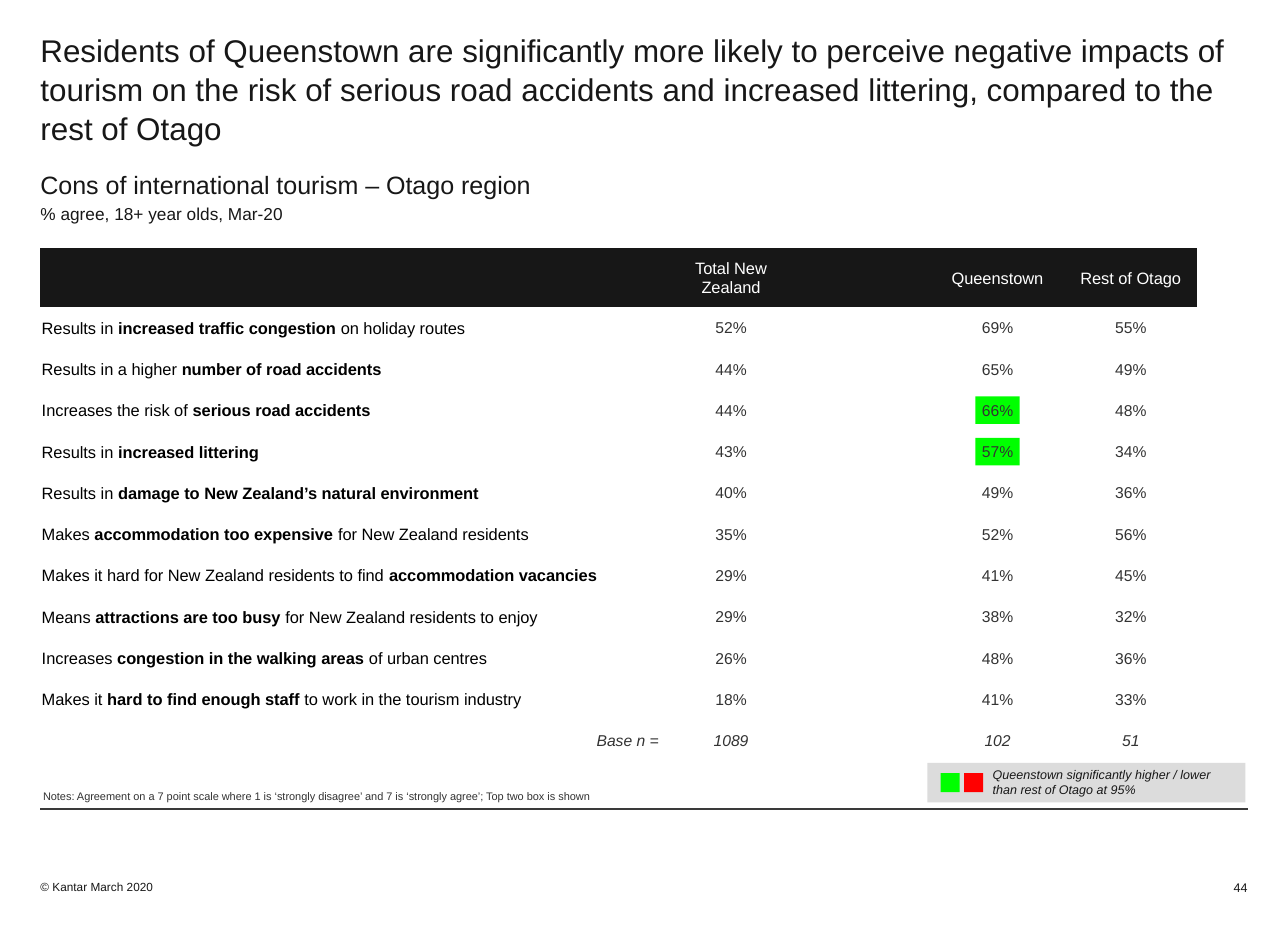
from lxml import etree
from pptx import Presentation
from pptx.dml.color import RGBColor
from pptx.enum.shapes import MSO_CONNECTOR, MSO_SHAPE
from pptx.enum.text import MSO_ANCHOR, MSO_AUTO_SIZE, PP_ALIGN
from pptx.oxml.ns import qn
from pptx.util import Cm, Pt

LEFT, CENTER, RIGHT = PP_ALIGN.LEFT, PP_ALIGN.CENTER, PP_ALIGN.RIGHT
TOP, MIDDLE, BOTTOM = MSO_ANCHOR.TOP, MSO_ANCHOR.MIDDLE, MSO_ANCHOR.BOTTOM
NO_FIT = MSO_AUTO_SIZE.NONE
RECTANGLE = MSO_SHAPE.RECTANGLE
STRAIGHT = MSO_CONNECTOR.STRAIGHT

FONT = "Arial"
COLORS = {
    "ink": "171717", "black": "000000", "body": "333333", "rule": "3A3A3A",
    "white": "FFFFFF", "panel": "DCDCDC", "higher": "00FF00", "lower": "FF0000",
}
NO_STYLE = "{2D5ABB26-0587-4C30-8999-92F81FD0307C}"
CELL_INSETS = (0.03, 0.03, 0.03, 0)

COLUMNS = [14.05, 3, 3, 3, 3]
HEADER_HEIGHT, ROW_HEIGHT = 1.32, 0.93
QUEENSTOWN = 3
HEADINGS = ["", "Total New Zealand", "", "Queenstown", "Rest of Otago"]
IMPACTS = [
    ("Results in *increased traffic congestion* on holiday routes", 52, 69, 55),
    ("Results in a higher *number of road accidents*", 44, 65, 49),
    ("Increases the risk of *serious road accidents*", 44, 66, 48),
    ("Results in *increased littering*", 43, 57, 34),
    ("Results in *damage to New Zealand’s natural environment*", 40, 49, 36),
    ("Makes *accommodation too expensive* for New Zealand residents", 35, 52, 56),
    ("Makes it hard for New Zealand residents to find *accommodation vacancies*", 29, 41, 45),
    ("Means *attractions are too busy* for New Zealand residents to enjoy", 29, 38, 32),
    ("Increases *congestion in the walking areas* of urban centres", 26, 48, 36),
    ("Makes it *hard to find enough staff* to work in the tourism industry", 18, 41, 33),
]
BASES = ["Base n =", "1089", "", "102", "51"]
SIGNIFICANT_ROWS = [3, 4]


def rgb(name):
    """Return the named colour."""
    return RGBColor.from_string(COLORS[name])


def write(paragraph, text, size=10, color="ink", align=LEFT, italic=False, before=0, spacing=None):
    """Write text into a paragraph, with the parts between asterisks in bold."""
    paragraph.alignment = align
    paragraph.space_before = Pt(before)
    paragraph.line_spacing = spacing
    paragraph.font.size = Pt(size)
    for position, part in enumerate(text.split("*")):
        if part:
            run = paragraph.add_run()
            run.text = part
            run.font.name = FONT
            run.font.size = Pt(size)
            run.font.bold = position % 2 == 1
            run.font.italic = italic
            run.font.color.rgb = rgb(color)


def set_insets(holder, insets):
    """Set the left, top, right and bottom margins of a cell or text frame."""
    left, top, right, bottom = map(Cm, insets)
    holder.margin_left, holder.margin_top = left, top
    holder.margin_right, holder.margin_bottom = right, bottom


def prepare(frame, insets, anchor):
    """Set up a wrapping text frame and return its first paragraph."""
    frame.word_wrap = True
    frame.auto_size = NO_FIT
    frame.vertical_anchor = anchor
    set_insets(frame, insets)
    return frame.paragraphs[0]


def add_text(slide, box, text, insets=(0, 0, 0, 0), anchor=BOTTOM, **style):
    """Add a text box with one paragraph."""
    frame = slide.shapes.add_textbox(*map(Cm, box)).text_frame
    write(prepare(frame, insets, anchor), text, **style)


def add_block(slide, box, color):
    """Add a plain coloured rectangle."""
    block = slide.shapes.add_shape(RECTANGLE, *map(Cm, box))
    block.shadow.inherit = False
    block.fill.solid()
    block.fill.fore_color.rgb = rgb(color)
    block.line.fill.background()


def place(holder, box):
    """Move a placeholder into a box."""
    holder.left, holder.top, holder.width, holder.height = map(Cm, box)


def fill_heading(slide, box):
    """Fill the title and the subtitle lines below it."""
    left, top, width, height = box
    title, subtitle = slide.placeholders
    title_height = 3.15
    insets = (0, 0.66, 0, 0)
    place(title, (left, top, width, title_height))
    write(prepare(title.text_frame, insets, TOP),
          "Residents of Queenstown are significantly more likely to perceive negative impacts of "
          "tourism on the risk of serious road accidents and increased littering, compared to the "
          "rest of Otago", size=20, spacing=1.04)
    place(subtitle, (left, top + title_height, width, height - title_height))
    topic = prepare(subtitle.text_frame, insets, TOP)
    measure = subtitle.text_frame.add_paragraph()
    for paragraph in (topic, measure):
        properties = paragraph._p.get_or_add_pPr()
        properties.set("marL", "0")
        properties.set("indent", "0")
        etree.SubElement(properties, qn("a:buNone"))
    write(topic, "Cons of international tourism – Otago region", size=16)
    write(measure, "% agree, 18+ year olds, Mar-20", size=11, before=2.2)


def fill_cell(cell, text, fill=None, insets=CELL_INSETS, **style):
    """Fill one table cell."""
    set_insets(cell, insets)
    cell.vertical_anchor = MIDDLE
    if fill:
        cell.fill.solid()
        cell.fill.fore_color.rgb = rgb(fill)
    else:
        cell.fill.background()
    write(cell.text_frame.paragraphs[0], text, **style)


def add_impacts_table(slide, box):
    """Add the table of impacts over its significance highlights."""
    left, top, width, height = box
    mark_width, mark_height = 1, 0.62
    center = left + sum(COLUMNS[:QUEENSTOWN]) + COLUMNS[QUEENSTOWN] / 2
    for row in SIGNIFICANT_ROWS:
        middle = top + HEADER_HEIGHT + (row - 0.5) * ROW_HEIGHT
        add_block(slide, (center - mark_width / 2, middle - mark_height / 2,
                          mark_width, mark_height), "higher")

    table = slide.shapes.add_table(len(IMPACTS) + 2, len(COLUMNS), *map(Cm, box)).table
    table.first_row = table.horz_banding = False
    table._tbl.tblPr.find(qn("a:tableStyleId")).text = NO_STYLE
    for column, column_width in zip(table.columns, COLUMNS):
        column.width = Cm(column_width)
    for index, row in enumerate(table.rows):
        row.height = Cm(ROW_HEIGHT if index else HEADER_HEIGHT)

    for column, heading in enumerate(HEADINGS):
        fill_cell(table.cell(0, column), heading, fill="ink", size=10.5, color="white", align=CENTER)
    for row, (impact, total, queenstown, rest) in enumerate(IMPACTS, 1):
        fill_cell(table.cell(row, 0), impact, fill="white", size=10.5, color="black")
        shares = [f"{total}%", "", f"{queenstown}%", f"{rest}%"]
        for column, share in enumerate(shares, 1):
            fill_cell(table.cell(row, column), share, color="body", align=CENTER)
    for column, base in enumerate(BASES):
        cell = table.cell(len(IMPACTS) + 1, column)
        if column:
            fill_cell(cell, base, color="body", align=CENTER, italic=True)
        else:
            fill_cell(cell, base, fill="white", insets=(0, 0.03, 0.13, 0),
                      color="body", align=RIGHT, italic=True)


def add_legend(slide, box):
    """Add the panel that explains the highlight colours."""
    left, top, width, height = box
    add_block(slide, box, "panel")
    side = 0.43
    for index, color in enumerate(("higher", "lower")):
        add_block(slide, (left + 0.3 + index * 0.53, top + (height - side) / 2, side, side), color)
    add_text(slide, (left + 1.37, top, 5.44, height),
             "Queenstown significantly higher / lower than rest of Otago at 95%",
             insets=(0.1, 0.1, 0.1, 0.1), anchor=TOP, size=8, italic=True)


def add_footer(slide, box):
    """Add the notes, the rule, the copyright line and the page number."""
    left, top, width, height = box
    add_text(slide, (left + 0.06, top, 19.5, 0.58),
             "Notes: Agreement on a 7 point scale where 1 is ‘strongly disagree’ and 7 is "
             "‘strongly agree’; Top two box is shown", size=7, color="body")
    level = Cm(top + 0.73)
    rule = slide.shapes.add_connector(STRAIGHT, Cm(left), level, Cm(left + width), level)
    rule.line.color.rgb = rgb("rule")
    rule.line.width = Pt(0.75)
    etree.SubElement(rule._element.spPr, qn("a:effectLst"))
    add_text(slide, (left, top + height - 1.47, 7.06, 1.47), "© Kantar March 2020",
             insets=(0, 0, 0, 0.79), size=7.5)
    add_text(slide, (left + width - 1.6, top + 1.9, 1.6, 0.76), "44", size=8, align=RIGHT)


def main():
    """Build and save the slide."""
    deck = Presentation()
    deck.slide_width, deck.slide_height = Cm(29), Cm(21)
    slide = deck.slides.add_slide(deck.slide_layouts[1])
    left, width = 0.91, 27.18
    fill_heading(slide, (left, 0, width, 5.49))
    add_impacts_table(slide, (left, 5.59, sum(COLUMNS), HEADER_HEIGHT + 11 * ROW_HEIGHT))
    add_footer(slide, (left, 17.48, width, 3.42))
    add_legend(slide, (20.88, 17.17, 7.16, 0.89))
    deck.save("out.pptx")


if __name__ == "__main__":
    main()
